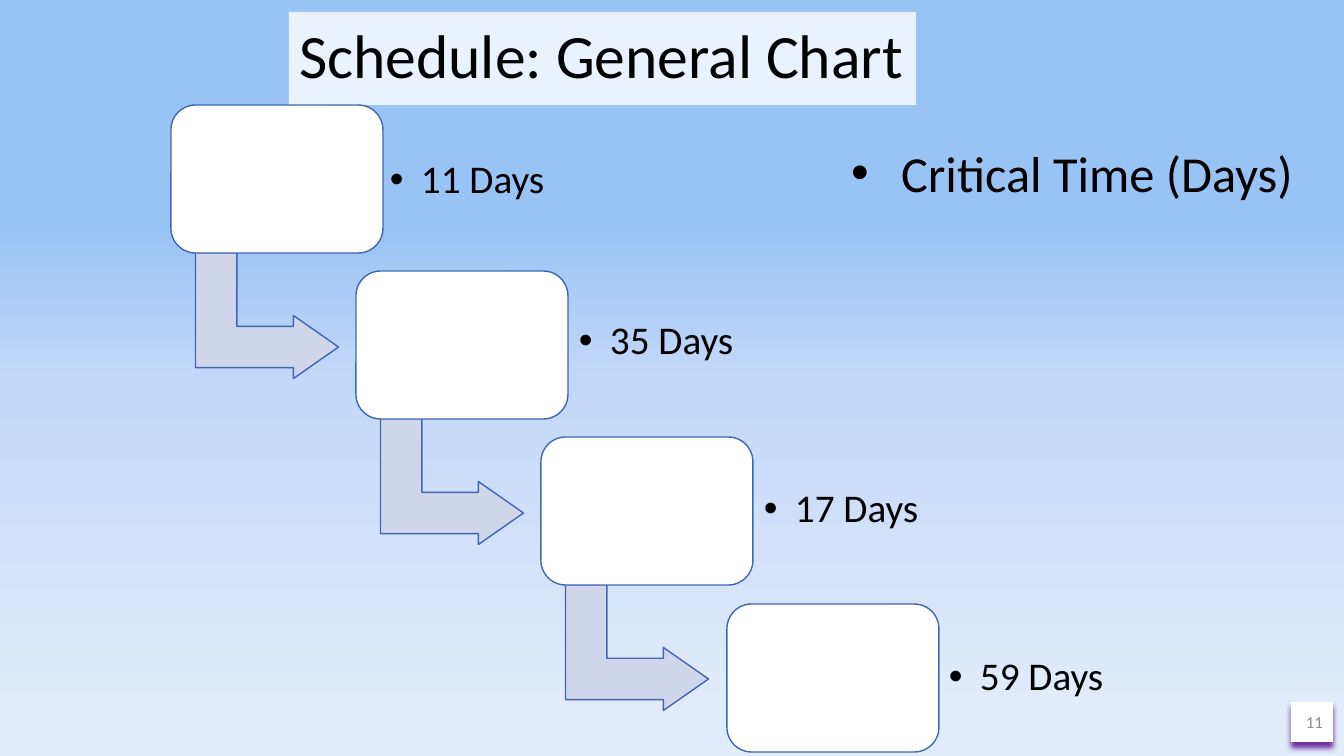
import pptx
import pptx.dml.color
import pptx.enum.shapes
import pptx.enum.text
import pptx.oxml
import pptx.oxml.ns
import pptx.util

RGBColor = pptx.dml.color.RGBColor
MSO_SHAPE = pptx.enum.shapes.MSO_SHAPE
MSO_ANCHOR = pptx.enum.text.MSO_ANCHOR
MSO_AUTO_SIZE = pptx.enum.text.MSO_AUTO_SIZE
PP_ALIGN = pptx.enum.text.PP_ALIGN
Pt = pptx.util.Pt

PX = 914400 / 100.8
FONT = "Calibri"
BLACK = RGBColor(0x00, 0x00, 0x00)
WHITE = RGBColor(0xFF, 0xFF, 0xFF)
GREY = RGBColor(0x8C, 0x8C, 0x8C)
PURPLE = RGBColor(0x70, 0x30, 0xA0)
LAVENDER = RGBColor(0xCF, 0xD5, 0xEA)
BLUE = RGBColor(0x3E, 0x67, 0xB2)
SKY = [
    (30, RGBColor(0x9A, 0xC3, 0xF5)),
    (50, RGBColor(0xC2, 0xD8, 0xF8)),
    (94, RGBColor(0xE1, 0xEB, 0xFB)),
]

# Label text, offset from its box, width and inset
STEPS = [
    ("11 Days", 207, 16, 196, 12),
    ("35 Days", 211, 11, 209, 12),
    ("17 Days", 211, 13, 186, 12),
    ("59 Days", 207, 14, 203, 15),
]
FIRST_X, FIRST_Y = 171, 105
SPAN_X, SPAN_Y = 556, 499  # from the first box to the last


def px(n):
    return pptx.util.Emu(round(n * PX))


def xml(body):
    return pptx.oxml.parse_xml(body.replace(
        ">", f' {pptx.oxml.ns.nsdecls("a")}>', 1))


def place(sp, x, y, w, h):
    sp.left, sp.top, sp.width, sp.height = px(x), px(y), px(w), px(h)


def set_text(sp, text, size, color=BLACK, align=PP_ALIGN.LEFT):
    tf = sp.text_frame
    tf.text = text
    p = tf.paragraphs[0]
    p.alignment = align
    font = p.runs[0].font
    font.name, font.size, font.color.rgb = FONT, Pt(size), color
    return p


def add_bullet(p, indent):
    pPr = p._p.get_or_add_pPr()
    pPr.set("marL", str(px(indent)))
    pPr.set("indent", str(-px(indent)))
    pPr.append(xml('<a:buFont typeface="Arial"></a:buFont>'))
    pPr.append(xml('<a:buChar char="•"></a:buChar>'))


def add_box(slide, kind, x, y, w, h, fill, line=None):
    sp = slide.shapes.add_shape(kind, px(x), px(y), px(w), px(h))
    sp.shadow.inherit = False
    sp.fill.solid()
    sp.fill.fore_color.rgb = fill
    if line is None:
        sp.line.fill.background()
    else:
        sp.line.color.rgb = line
        sp.line.width = Pt(1)
    return sp


def add_arrow(slide, x, y):
    sp = add_box(slide, MSO_SHAPE.BENT_UP_ARROW, x, y, 126, 143, LAVENDER, BLUE)
    sp.rotation = 90
    for i, value in enumerate((0.328, 0.25, 0.358)):
        sp.adjustments[i] = value


def add_label(slide, text, x, y, w, inset):
    sp = slide.shapes.add_textbox(px(x), px(y), px(w), px(120))
    tf = sp.text_frame
    tf.word_wrap = True
    tf.vertical_anchor = MSO_ANCHOR.MIDDLE
    tf.margin_left = tf.margin_right = px(inset)
    tf.margin_top = tf.margin_bottom = px(inset)
    p = set_text(sp, text, 28)
    p.line_spacing = 0.9
    p.space_after = Pt(4)
    add_bullet(p, 31)


def set_background(slide):
    fill = slide.background.fill
    fill.gradient()
    fill.gradient_angle = 270
    stops = fill.gradient_stops._gsLst
    for gs in list(stops):
        stops.remove(gs)
    for pos, color in SKY:
        stops.append(xml(f'<a:gs pos="{pos * 1000}">'
                         f'<a:srgbClr val="{color}"/></a:gs>'))


def add_title(slide):
    sp = slide.shapes.title
    place(sp, 289, 12, 627, 93)
    sp.fill.solid()
    sp.fill.fore_color.rgb = WHITE
    sp.fill._xPr.find(".//" + pptx.oxml.ns.qn("a:srgbClr")).append(
        xml('<a:alpha val="80000"></a:alpha>'))
    sp.text_frame.auto_size = MSO_AUTO_SIZE.NONE
    sp.text_frame.vertical_anchor = MSO_ANCHOR.MIDDLE
    set_text(sp, "Schedule: General Chart", 44).line_spacing = 0.9


def add_caption(slide):
    sp = slide.placeholders[1]
    place(sp, 841, 137, 467, 72)
    sp.text_frame.word_wrap = False
    sp.text_frame.auto_size = MSO_AUTO_SIZE.SHAPE_TO_FIT_TEXT
    p = set_text(sp, "Critical Time (Days)", 36)
    p.space_before = Pt(0)
    add_bullet(p, 50)


def add_page_number(slide):
    sp = add_box(slide, MSO_SHAPE.RECTANGLE, 1291, 702, 42, 40, WHITE)
    sp.text_frame.vertical_anchor = MSO_ANCHOR.MIDDLE
    set_text(sp, "11", 12, GREY, PP_ALIGN.RIGHT)
    effects = sp._element.spPr.find(pptx.oxml.ns.qn("a:effectLst"))
    effects.append(xml(
        '<a:outerShdw blurRad="50800" dist="50800" dir="5400000">'
        f'<a:srgbClr val="{PURPLE}"/></a:outerShdw>'))


def main():
    prs = pptx.Presentation()
    prs.slide_width, prs.slide_height = px(1344), px(756)
    slide = prs.slides.add_slide(prs.slide_layouts[1])

    # Background, heading and page number
    set_background(slide)
    add_title(slide)
    add_page_number(slide)

    # Staircase of boxes, each but the last leading to the next
    last = len(STEPS) - 1
    for i, (text, dx, dy, w, inset) in enumerate(STEPS):
        x = FIRST_X + i * SPAN_X // last
        y = FIRST_Y + i * SPAN_Y // last
        if i < last:
            add_arrow(slide, x + 33, y + 139)
        add_box(slide, MSO_SHAPE.ROUNDED_RECTANGLE, x, y, 212, 148, WHITE, BLUE)
        add_label(slide, text, x + dx, y + dy, w, inset)

    # Caption for the day counts
    add_caption(slide)
    prs.save("out.pptx")


if __name__ == "__main__":
    main()
